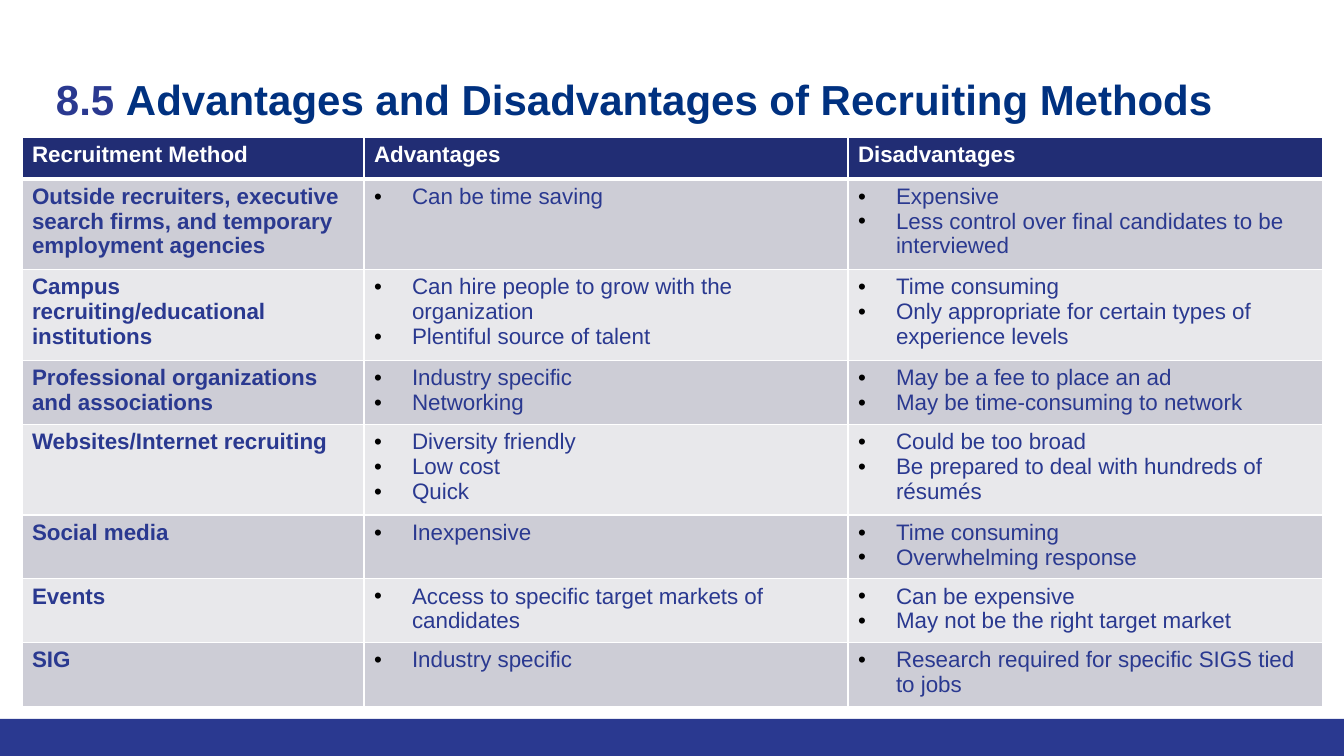
from lxml.etree import SubElement as Sub
from pptx import Presentation
from pptx.dml.color import RGBColor
from pptx.enum.shapes import MSO_SHAPE as Shape
from pptx.enum.text import MSO_ANCHOR as Anchor
from pptx.oxml.ns import qn
from pptx.util import Pt

PX = 12192000 / 1344  # EMU per px

WHITE = RGBColor(0xFF, 0xFF, 0xFF)
BLACK = RGBColor(0x00, 0x00, 0x00)
BLUE = RGBColor(0x2A, 0x39, 0x90)
TITLE_BLUE = RGBColor(0x00, 0x31, 0x80)
HEADER_BLUE = RGBColor(0x21, 0x2D, 0x74)
BANDS = (RGBColor(0xCD, 0xCD, 0xD6), RGBColor(0xE8, 0xE8, 0xEB))

FONT = "Arial"
COLUMNS = (342, 484, 475)
HEADER_HEIGHT = 42
ROW_HEIGHTS = (85, 85, 63, 85, 63, 63, 63)
INDENT = 38

HEADERS = ("Recruitment Method", "Advantages", "Disadvantages")
METHODS = (
    ("Outside recruiters, executive search firms, and temporary employment agencies",
     ["Can be time saving"],
     ["Expensive", "Less control over final candidates to be interviewed"]),
    ("Campus recruiting/educational institutions",
     ["Can hire people to grow with the organization", "Plentiful source of talent"],
     ["Time consuming", "Only appropriate for certain types of experience levels"]),
    ("Professional organizations and associations",
     ["Industry specific", "Networking"],
     ["May be a fee to place an ad", "May be time-consuming to network"]),
    ("Websites/Internet recruiting",
     ["Diversity friendly", "Low cost", "Quick"],
     ["Could be too broad", "Be prepared to deal with hundreds of résumés"]),
    ("Social media",
     ["Inexpensive"],
     ["Time consuming", "Overwhelming response"]),
    ("Events",
     ["Access to specific target markets of candidates"],
     ["Can be expensive", "May not be the right target market"]),
    ("SIG",
     ["Industry specific"],
     ["Research required for specific SIGS tied to jobs"]),
)


def px(n):
    return round(n * PX)


def set_font(font, size, color, bold):
    font.name, font.size, font.bold = FONT, Pt(size), bold
    font.color.rgb = color


def add_bar(s, x, y, w, h):
    bar = s.shapes.add_shape(Shape.RECTANGLE, px(x), px(y), px(w), px(h))
    bar.shadow.inherit = False
    bar.fill.solid()
    bar.fill.fore_color.rgb = BLUE
    bar.line.fill.background()


def add_title(s, x, y, w, h, parts):
    tf = s.shapes.add_textbox(px(x), px(y), px(w), px(h)).text_frame
    tf.word_wrap = True
    tf.vertical_anchor = Anchor.TOP
    tf.margin_left = tf.margin_right = tf.margin_bottom = px(10)
    tf.margin_top = px(14)
    for text, color in parts:
        r = tf.paragraphs[0].add_run()
        r.text = text
        set_font(r.font, 30, color, True)


def add_bullet(p):
    pPr = p._p.get_or_add_pPr()
    pPr.set("marL", str(px(INDENT)))
    pPr.set("indent", str(-px(INDENT)))
    Sub(Sub(pPr, qn("a:buClr")), qn("a:srgbClr"), val=str(BLACK))
    Sub(pPr, qn("a:buFont"), typeface=FONT)
    Sub(pPr, qn("a:buChar"), char="•")


def set_borders(cell, top, bottom):
    tcPr = cell._tc.get_or_add_tcPr()
    for side, width in (("L", 1), ("R", 1), ("T", top), ("B", bottom)):
        ln = Sub(tcPr, qn("a:ln" + side), w=str(Pt(width)))
        Sub(Sub(ln, qn("a:solidFill")), qn("a:srgbClr"), val=str(WHITE))


def fill_cell(cell, lines, fill, color, bold, bullets=False, top=1, bottom=1):
    set_borders(cell, top, bottom)
    cell.fill.solid()
    cell.fill.fore_color.rgb = fill
    tf = cell.text_frame
    tf.text = "\n".join(lines)
    for p in tf.paragraphs:
        if bullets:
            add_bullet(p)
        set_font(p.font, 16, color, bold)


def add_methods_table(s, x, y):
    heights = (HEADER_HEIGHT, *ROW_HEIGHTS)
    table = s.shapes.add_table(len(heights), len(COLUMNS), px(x), px(y),
                               px(sum(COLUMNS)), px(sum(heights))).table
    for column, width in zip(table.columns, COLUMNS):
        column.width = px(width)
    for row, height in zip(table.rows, heights):
        row.height = px(height)

    # Header row
    for c, header in enumerate(HEADERS):
        fill_cell(table.cell(0, c), [header], HEADER_BLUE, WHITE, True, bottom=3)

    # One banded row per method
    for i, (method, *lists) in enumerate(METHODS):
        band = BANDS[i % 2]
        top = 3 if i == 0 else 1
        fill_cell(table.cell(i + 1, 0), [method], band, BLUE, True, top=top)
        for c, lines in enumerate(lists, 1):
            fill_cell(table.cell(i + 1, c), lines, band, BLUE, False, bullets=True, top=top)


def main():
    prs = Presentation()
    prs.slide_width, prs.slide_height = px(1344), px(756)
    s = prs.slides.add_slide(prs.slide_layouts[6])

    # Footer bar
    add_bar(s, 0, 719, 1344, 37)

    # Title
    add_title(s, 46, 60, 1252, 90, (
        ("8.5 ", BLUE),
        ("Advantages and Disadvantages of Recruiting Methods", TITLE_BLUE),
    ))

    # Comparison table
    add_methods_table(s, 22, 137)

    prs.save("out.pptx")


if __name__ == "__main__":
    main()
